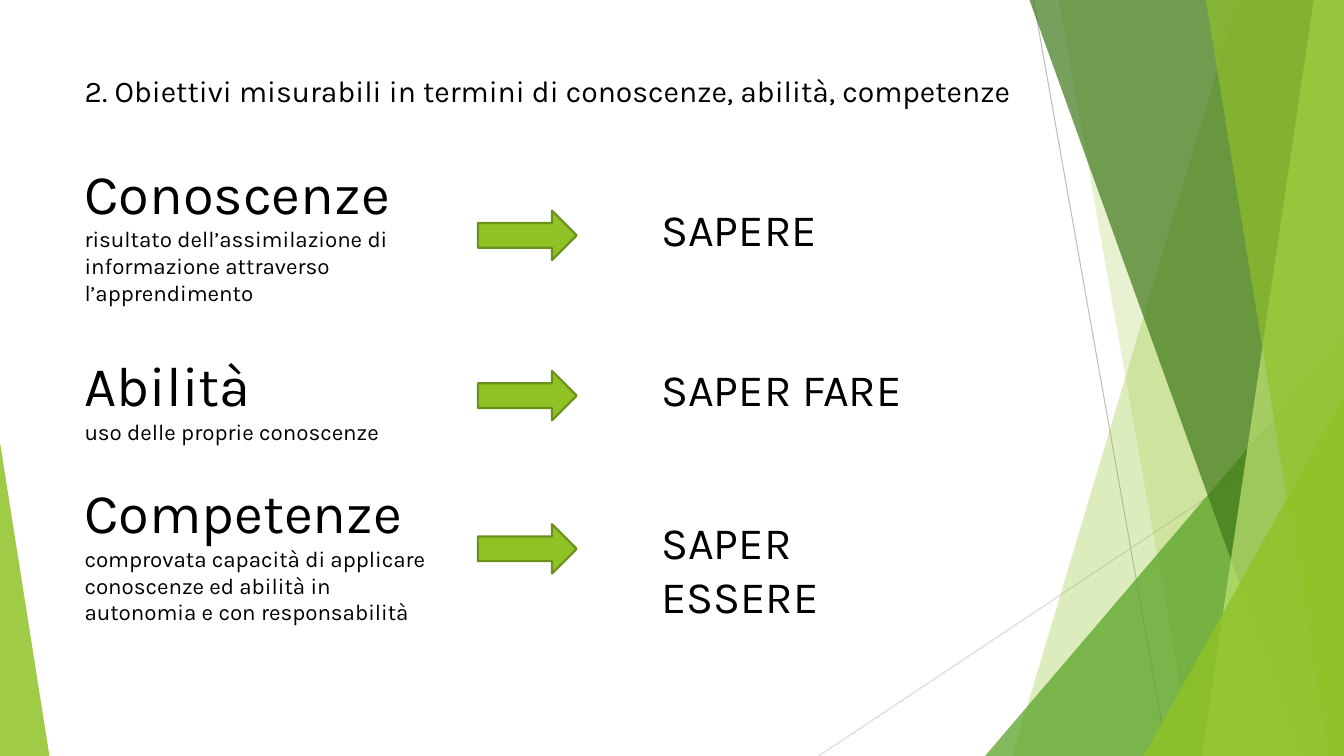
from lxml import etree
from pptx import Presentation
from pptx.dml.color import RGBColor
from pptx.enum import shapes, text
from pptx.oxml import ns
from pptx.util import Inches, Pt

FONT = "Karla"
WIDTH, HEIGHT = 13.33, 7.5
COLORS = {"text": "000000", "green": "90C226", "mid": "54A021", "dark": "3F7819",
          "light": "C0E474", "outline": "6B901C", "steep": "BFBFBF", "shallow": "D9D9D9"}

HEADING = "2. Obiettivi misurabili in termini di conoscenze, abilità, competenze"
ROWS = [
    (1.52, 2.09, "Conoscenze", "risultato dell’assimilazione di informazione attraverso l’apprendimento", "SAPERE"),
    (3.43, 3.68, "Abilità", "uso delle proprie conoscenze", "SAPER FARE"),
    (4.69, 5.2, "Competenze",
     "comprovata capacità di applicare conoscenze ed abilità in autonomia e con responsabilità", "SAPER ESSERE"),
]


def rgb(name):
    """Return the named palette colour."""
    return RGBColor.from_string(COLORS[name])


def fill_facet(sp, color, opacity):
    """Give a shape a translucent fill without outline or shadow."""
    sp.shadow.inherit = False
    sp.line.fill.background()
    sp.fill.solid()
    sp.fill.fore_color.rgb = rgb(color)
    clr = sp._element.spPr.find(ns.qn("a:solidFill"))[0]
    etree.SubElement(clr, ns.qn("a:alpha"), val=str(opacity * 1000))


def add_band(s, top_x, bottom_x, color, opacity):
    """Draw a full-height band from a slanted left side to the right slide edge."""
    fb = s.shapes.build_freeform(Inches(top_x), 0, scale=1.0)
    corners = [(WIDTH, 0), (WIDTH, HEIGHT), (bottom_x, HEIGHT)]
    fb.add_line_segments([(Inches(x), Inches(y)) for x, y in corners], close=True)
    fill_facet(fb.convert_to_shape(), color, opacity)


def add_corner(s, left, top, width, apex, color, opacity):
    """Draw a right triangle standing on the bottom edge of the slide."""
    sp = s.shapes.add_shape(shapes.MSO_SHAPE.ISOSCELES_TRIANGLE, Inches(left), Inches(top),
                            Inches(width), Inches(HEIGHT - top))
    sp.adjustments[0] = apex
    fill_facet(sp, color, opacity)


def add_hairline(s, x1, y1, x2, y2, color):
    """Draw a thin decorative line."""
    line = s.shapes.add_connector(shapes.MSO_CONNECTOR.STRAIGHT, *map(Inches, (x1, y1, x2, y2)))
    line.line.color.rgb = rgb(color)
    line.line.width = Pt(0.75)
    etree.SubElement(line._element.spPr, ns.qn("a:effectLst"))


def add_backdrop(s):
    """Draw the faceted green decoration from back to front."""
    add_hairline(s, 10.25, 0, 11.58, HEIGHT, "steep")
    add_hairline(s, WIDTH, 4.03, 8.12, HEIGHT, "shallow")
    add_band(s, 12.28, 10.04, "green", 30)
    add_band(s, 10.5, 11.83, "green", 20)
    add_corner(s, 9.77, 3.33, 3.56, 1, "mid", 72)
    add_band(s, 10.21, 12.91, "dark", 70)
    add_band(s, 13.03, 11.92, "light", 70)
    add_band(s, 11.96, 13.18, "green", 65)
    add_corner(s, 11.34, 3.93, 1.99, 1, "green", 80)
    add_corner(s, 0, 4.39, 0.49, 0, "green", 85)


def write(sp, content, *sizes):
    """Set top-left text, with one font size for each line."""
    tf = sp.text_frame
    tf.word_wrap = True
    tf.auto_size = text.MSO_AUTO_SIZE.NONE
    tf.vertical_anchor = text.MSO_ANCHOR.TOP
    p = tf.paragraphs[0]
    p.text = content
    p.alignment = text.PP_ALIGN.LEFT
    for r, size in zip(p.runs, sizes):
        r.font.name = FONT
        r.font.size = Pt(size)
        r.font.color.rgb = rgb("text")


def add_heading(s, left, top, width, height):
    """Place the slide title in the given box."""
    sp = s.shapes.title
    sp.left, sp.top, sp.width, sp.height = map(Inches, (left, top, width, height))
    write(sp, HEADING, 21.5)


def add_row(s, left, top, arrow_top, term, meaning, outcome):
    """Place a term with its meaning, an arrow and the outcome."""
    sp = s.shapes.add_textbox(Inches(left), Inches(top), Inches(3.66), Inches(1.63))
    write(sp, f"{term}\v{meaning}", 40, 16)

    arrow = s.shapes.add_shape(shapes.MSO_SHAPE.RIGHT_ARROW, Inches(left + 4), Inches(arrow_top),
                               Inches(0.98), Inches(0.49))
    arrow.shadow.inherit = False
    arrow.fill.solid()
    arrow.fill.fore_color.rgb = rgb("green")
    arrow.line.color.rgb = rgb("outline")
    arrow.line.width = Pt(1.5)

    sp = s.shapes.add_textbox(Inches(left + 5.72), Inches(arrow_top - 0.14), Inches(3.1), Inches(0.64))
    write(sp, outcome, 32)


def main():
    """Build and save the slide."""
    prs = Presentation()
    prs.slide_width, prs.slide_height = Inches(WIDTH), Inches(HEIGHT)
    s = prs.slides.add_slide(prs.slide_layouts[5])
    add_backdrop(s)
    add_heading(s, 0.74, 0.67, 10.18, 0.72)
    for row in ROWS:
        add_row(s, 0.74, *row)
    prs.save("out.pptx")


if __name__ == "__main__":
    main()
